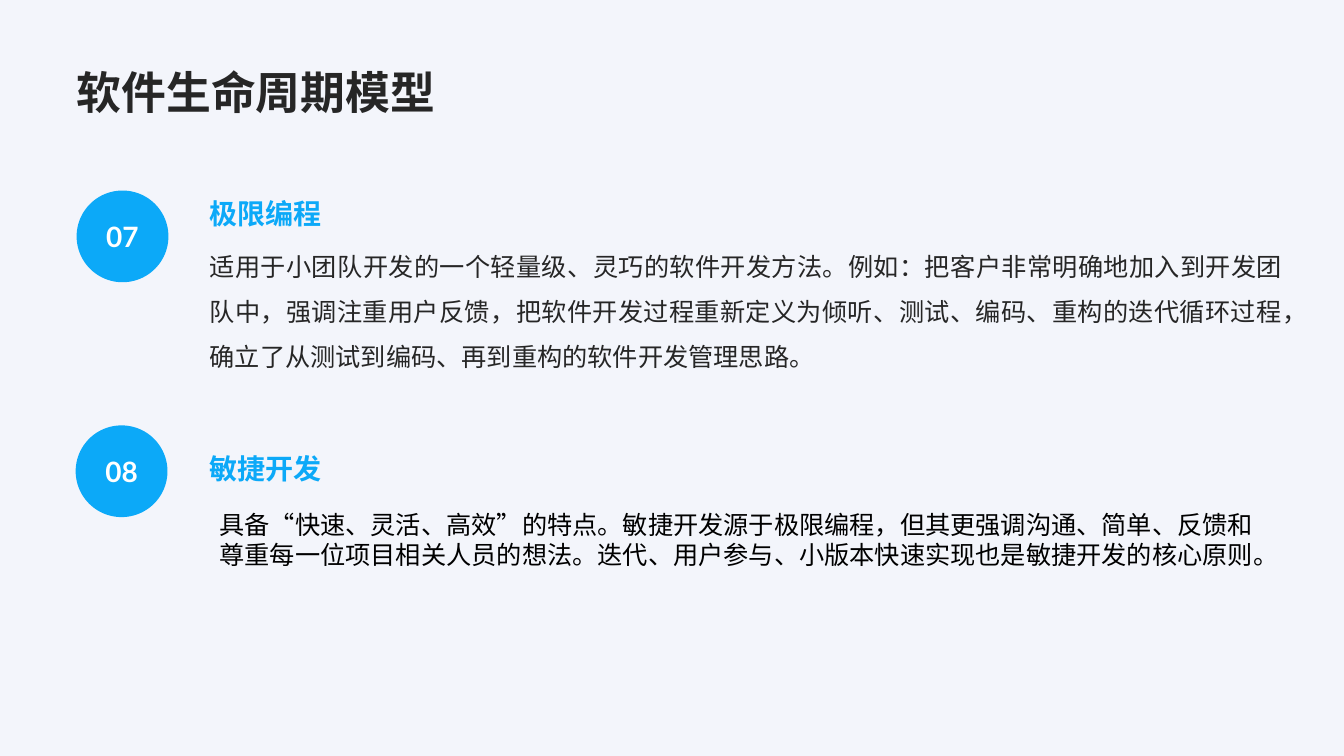
from pptx import Presentation
from pptx import util as u
from pptx.dml.color import RGBColor
from pptx.enum import lang, shapes, text
from pptx.oxml.ns import qn
from lxml import etree

BACKGROUND = RGBColor(0xF3, 0xF5, 0xFB)
INK = RGBColor(0x26, 0x26, 0x26)
ACCENT = RGBColor(0x0C, 0xA9, 0xF8)
WHITE = RGBColor(0xFF, 0xFF, 0xFF)
BLACK = RGBColor(0, 0, 0)
LATIN, ASIAN = "Lato", "Noto Sans CJK JP"

TEXT_LEFT, TEXT_WIDTH, HEADING_WIDTH = 15.6, 79.88, 39.53
MODELS = [
    dict(
        number="07", name="极限编程", badge=(5.7, 25.2), heading_top=24.93,
        body="适用于小团队开发的一个轻量级、灵巧的软件开发方法。例如：把客户非常明确地加入到开发团队中，"
             "强调注重用户反馈，把软件开发过程重新定义为倾听、测试、编码、重构的迭代循环过程，"
             "确立了从测试到编码、再到重构的软件开发管理思路。",
        body_top=31.2, body_height=23.2,
        style=dict(color=INK, align=text.PP_ALIGN.JUSTIFY, spacing=1.5),
    ),
    dict(
        number="08", name="敏捷开发", badge=(5.63, 56.27), heading_top=58.67,
        body="具备“快速、灵活、高效”的特点。敏捷开发源于极限编程，但其更强调沟通、简单、反馈和"
             "尊重每一位项目相关人员的想法。迭代、用户参与、小版本快速实现也是敏捷开发的核心原则。",
        body_top=66.67, body_height=9.47,
        style=dict(color=BLACK, inset=None, auto_size=text.MSO_AUTO_SIZE.SHAPE_TO_FIT_TEXT),
    ),
]


def write(shape, content, *, size=18, color=INK, bold=False, font=LATIN, align=text.PP_ALIGN.LEFT,
          anchor=text.MSO_ANCHOR.TOP, spacing=1.0, inset=0, wrap=True,
          auto_size=text.MSO_AUTO_SIZE.NONE):
    """Put formatted text into a shape; an inset of None keeps the default margins."""
    frame = shape.text_frame
    frame.word_wrap, frame.auto_size, frame.vertical_anchor = wrap, auto_size, anchor
    if inset is not None:
        frame.margin_left = frame.margin_right = u.Inches(inset)
        frame.margin_top = frame.margin_bottom = u.Inches(inset)
    paragraph = frame.paragraphs[0]
    paragraph.alignment, paragraph.line_spacing = align, spacing
    run = paragraph.add_run()
    run.text = content
    run.font.size, run.font.bold, run.font.name = u.Pt(size), bold, font
    run.font.color.rgb = color
    run.font.language_id = lang.MSO_LANGUAGE_ID.SIMPLIFIED_CHINESE
    latin = run.font._element.find(qn("a:latin"))
    asian = etree.Element(qn("a:ea"), typeface=ASIAN)
    latin.addnext(asian)


class Deck:
    """Holds the presentation, its current slide and a grid of 100 columns by 100 rows."""

    def __init__(self, width=13.33, height=7.5):
        self.presentation = Presentation()
        self.presentation.slide_width = u.Inches(width)
        self.presentation.slide_height = u.Inches(height)
        self.slide = self.presentation.slides.add_slide(self.presentation.slide_layouts[5])
        self.slide.background.fill.solid()
        self.slide.background.fill.fore_color.rgb = BACKGROUND

    def box(self, left, top, width, height):
        """Turn columns and rows into slide lengths."""
        column = self.presentation.slide_width / 100
        row = self.presentation.slide_height / 100
        return [round(length) for length in (left * column, top * row, width * column, height * row)]

    def title(self, content, *area):
        """Move and fill the title placeholder."""
        title = self.slide.shapes.title
        title.left, title.top, title.width, title.height = self.box(*area)
        write(title, content, size=32, bold=True, font=ASIAN, anchor=text.MSO_ANCHOR.BOTTOM)

    def label(self, content, *area, **style):
        """Add a text box."""
        write(self.slide.shapes.add_textbox(*self.box(*area)), content, **style)

    def badge(self, number, left, top):
        """Add a numbered circle."""
        circle = self.slide.shapes.add_shape(shapes.MSO_SHAPE.OVAL, *self.box(left, top, 6.83, 12.13))
        circle.shadow.inherit = False
        circle.fill.solid()
        circle.fill.fore_color.rgb = ACCENT
        circle.line.fill.background()
        write(circle, number, size=20, bold=True, color=WHITE, wrap=False,
              align=text.PP_ALIGN.CENTER, anchor=text.MSO_ANCHOR.MIDDLE)

    def model(self, number, name, badge, heading_top, body, body_top, body_height, style):
        """Add one life-cycle model with its badge, heading and description."""
        self.label(body, TEXT_LEFT, body_top, TEXT_WIDTH, body_height, **style)
        self.label(name, TEXT_LEFT, heading_top, HEADING_WIDTH, 5.47, size=20, bold=True,
                   color=ACCENT, align=text.PP_ALIGN.JUSTIFY, anchor=text.MSO_ANCHOR.BOTTOM)
        self.badge(number, *badge)


def main():
    """Build the slide and save it."""
    deck = Deck()
    deck.title("软件生命周期模型", 5.7, 5.2, 67.74, 10.53)
    for model in MODELS:
        deck.model(**model)
    deck.presentation.save("out.pptx")


if __name__ == "__main__":
    main()
